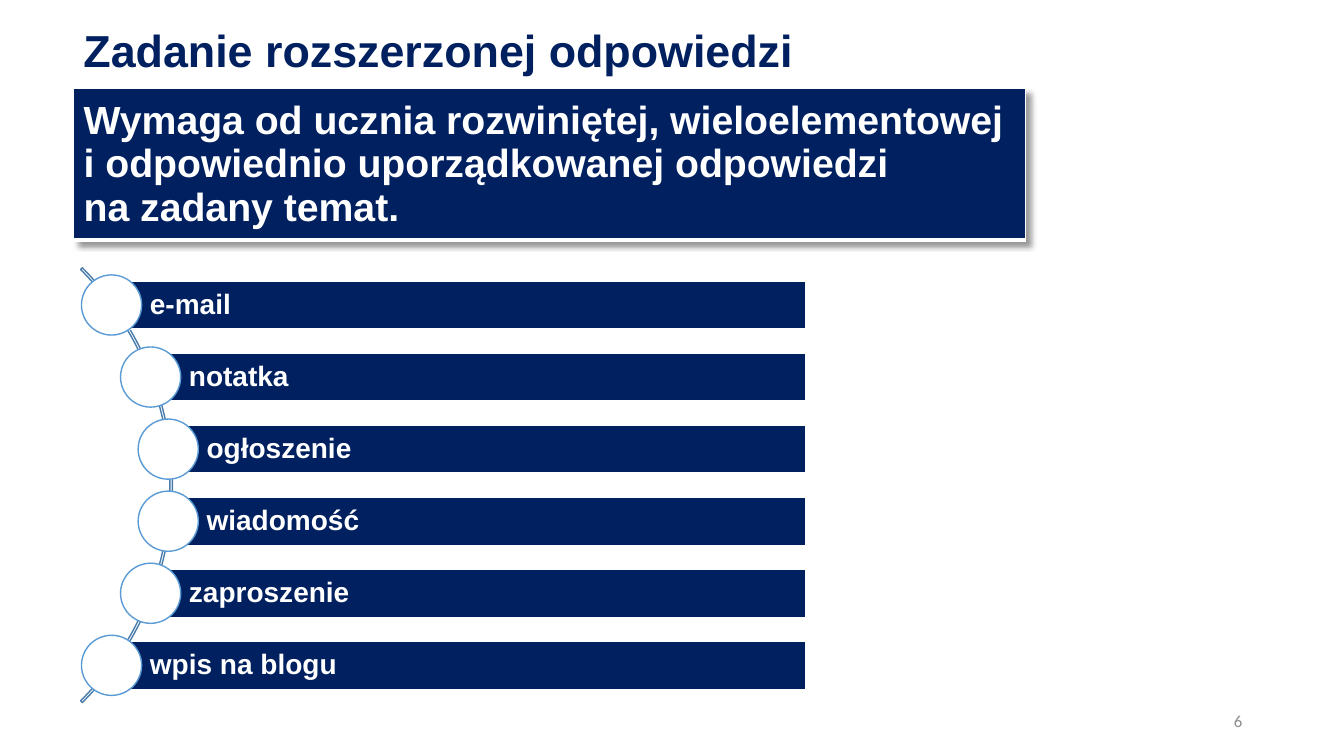
import math
from dataclasses import dataclass

import pptx
import pptx.dml.color
import pptx.enum.shapes
import pptx.enum.text
import pptx.util
from lxml import etree
from pptx.oxml.ns import qn

# Content
TITLE = "Zadanie rozszerzonej odpowiedzi"
DEFINITION = [
    "Wymaga od ucznia rozwiniętej, wieloelementowej",
    "i odpowiednio uporządkowanej odpowiedzi",
    "na zadany temat.",
]
FORMS = ["e-mail", "notatka", "ogłoszenie", "wiadomość", "zaproszenie", "wpis na blogu"]
PAGE_NUMBER = "6"


@dataclass(frozen=True)
class Theme:
    navy: str = "002060"
    white: str = "FFFFFF"
    ring: str = "5B9BD5"
    arc: str = "497CAB"
    grey: str = "8C8C8C"
    font: str = "Arial"
    number_font: str = "Calibri"
    title_size: int = 32
    definition_size: int = 28
    form_size: int = 20
    number_size: int = 12


THEME = Theme()

# Grid of square cells, 80 columns by 45 rows; boxes are left, top, width, height
COLUMNS, ROWS = 80, 45
TITLE_BOX = (4.38, 1.08, 45.18, 4.14)
TABLE_BOX = (4.38, 5.28, 56.64, 8.28)
NUMBER_BOX = (56.52, 41.7, 18, 2.4)
ARC_X, ARC_Y, ARC_RADIUS = -8.04, 28.88, 18.3
ORBIT = 18.18
PITCH, BAR_HEIGHT, BAR_RIGHT, CIRCLE = 4.29, 2.86, 47.97, 3.58
TEXT_INSET, SMALL_INSET = 2.28, 0.36

deck = pptx.Presentation()
deck.slide_width = pptx.util.Inches(13.33)
deck.slide_height = pptx.util.Inches(7.5)
page = deck.slides.add_slide(deck.slide_layouts[6])
Align = pptx.enum.text.PP_ALIGN
Shape = pptx.enum.shapes.MSO_SHAPE


def grid(*cells):
    return [round(cell * deck.slide_height / ROWS) for cell in cells]


def color(code):
    return pptx.dml.color.RGBColor.from_string(code)


def style(para, size, code, font=THEME.font, bold=True, align=Align.LEFT):
    para.alignment = align
    para.font.name = font
    para.font.size = pptx.util.Pt(size)
    para.font.bold = bold
    para.font.color.rgb = color(code)


def add_text(box, text):
    frame = page.shapes.add_textbox(*grid(*box)).text_frame
    frame.word_wrap = True
    frame.vertical_anchor = pptx.enum.text.MSO_ANCHOR.MIDDLE
    frame.text = text
    return frame.paragraphs[0]


def add_figure(kind, box, line, fill=None):
    figure = page.shapes.add_shape(kind, *grid(*box))
    figure.shadow.inherit = False
    if fill:
        figure.fill.solid()
        figure.fill.fore_color.rgb = color(fill)
    else:
        figure.fill.background()
    figure.line.color.rgb = color(line)
    figure.line.width = pptx.util.Pt(1)
    return figure


def add_color(parent, code):
    return etree.SubElement(parent, qn("a:srgbClr"), val=code)


# Title
heading = add_text(TITLE_BOX, TITLE)
heading.line_spacing = 0.9
style(heading, THEME.title_size, THEME.navy)

# Definition table with white borders and a shadow
table = page.shapes.add_table(1, 1, *grid(*TABLE_BOX)).table
table.first_row = table.horz_banding = False
cell = table.cell(0, 0)
cell.vertical_anchor = pptx.enum.text.MSO_ANCHOR.MIDDLE
para = cell.text_frame.paragraphs[0]
for index, text in enumerate(DEFINITION):
    if index:
        para.add_line_break()
    para.add_run().text = text
style(para, THEME.definition_size, THEME.white)
cell_properties = cell._tc.get_or_add_tcPr()
for side, points in (("L", 1), ("R", 1), ("T", 1), ("B", 3)):
    border = etree.SubElement(cell_properties, qn("a:ln" + side), w=str(pptx.util.Pt(points)))
    add_color(etree.SubElement(border, qn("a:solidFill")), THEME.white)
cell.fill.solid()
cell.fill.fore_color.rgb = color(THEME.navy)
effects = etree.Element(qn("a:effectLst"))
shadow = etree.SubElement(effects, qn("a:outerShdw"), blurRad="50800", dist="50800",
                          dir="2700000", algn="tl", rotWithShape="0")
etree.SubElement(add_color(shadow, "000000"), qn("a:alpha"), val="40000")
table._tbl.tblPr.insert(0, effects)

# Arc behind the list
arc = add_figure(Shape.BLOCK_ARC, (ARC_X - ARC_RADIUS, ARC_Y - ARC_RADIUS,
                                   2 * ARC_RADIUS, 2 * ARC_RADIUS), THEME.arc)
for index, value in enumerate((189, 27, 0.004)):
    arc.adjustments[index] = value

# Bars and circles, centred on the arc
for index, form in enumerate(FORMS):
    offset = (index - (len(FORMS) - 1) / 2) * PITCH
    middle = ARC_Y + offset
    left = ARC_X + math.sqrt(ORBIT ** 2 - offset ** 2)
    bar = add_figure(Shape.RECTANGLE, (left, middle - BAR_HEIGHT / 2,
                                       BAR_RIGHT - left, BAR_HEIGHT), THEME.white, THEME.navy)
    frame = bar.text_frame
    frame.margin_left, frame.margin_right = grid(TEXT_INSET, SMALL_INSET)
    frame.margin_top, frame.margin_bottom = grid(SMALL_INSET, SMALL_INSET)
    frame.vertical_anchor = pptx.enum.text.MSO_ANCHOR.MIDDLE
    frame.text = form
    frame.paragraphs[0].line_spacing = 0.9
    style(frame.paragraphs[0], THEME.form_size, THEME.white)
    add_figure(Shape.OVAL, (left - CIRCLE / 2, middle - CIRCLE / 2, CIRCLE, CIRCLE),
               THEME.ring, THEME.white)

# Page number
style(add_text(NUMBER_BOX, PAGE_NUMBER), THEME.number_size, THEME.grey,
      THEME.number_font, False, Align.RIGHT)

deck.save("out.pptx")
